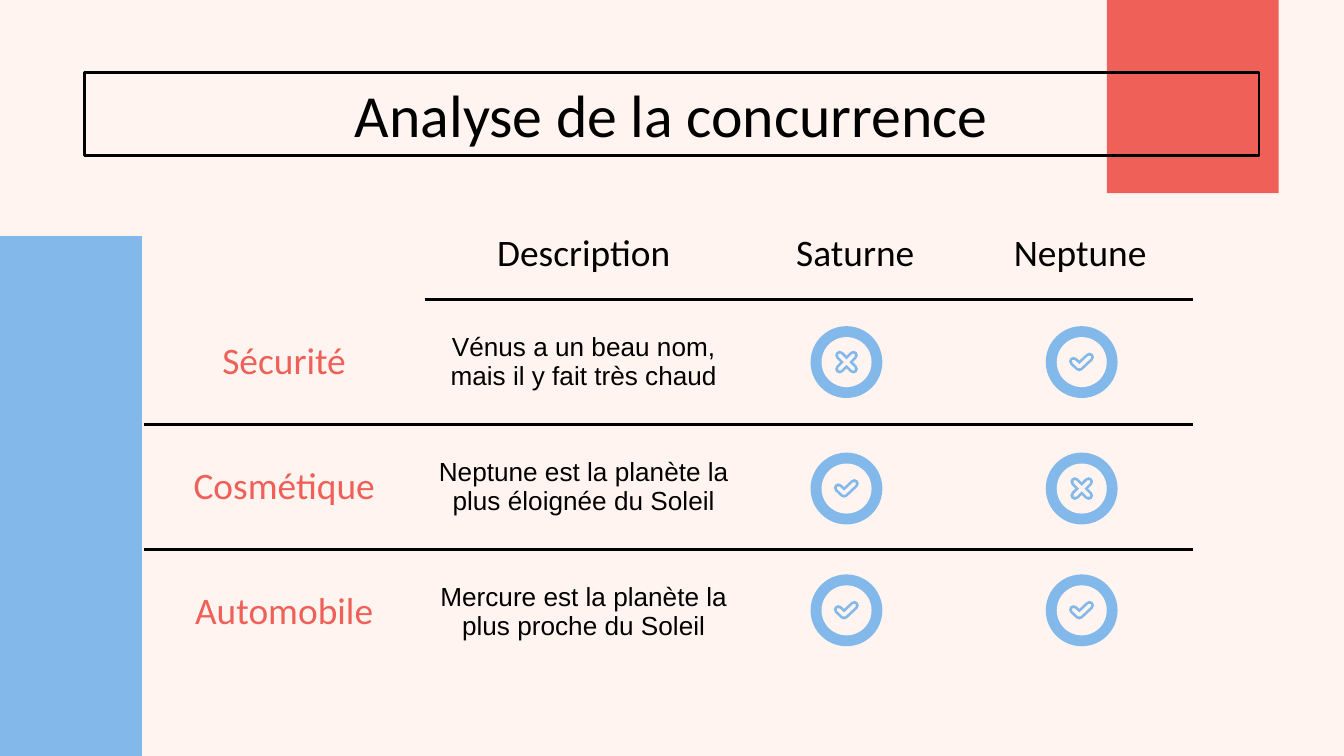
from lxml.etree import SubElement
from pptx import Presentation
from pptx.dml.color import RGBColor
from pptx.enum.shapes import MSO_SHAPE as Kind
from pptx.enum.text import MSO_ANCHOR as Anchor, PP_ALIGN as Align
from pptx.oxml.ns import qn
from pptx.util import Pt

COLORS = {"cream": "FFF4EF", "blue": "83B9EA", "red": "EF6058", "black": "000000"}
HEADS = ["", "Description", "Saturne", "Neptune"]
ROWS = [
    ("Sécurité", "Vénus a un beau nom, mais il y fait très chaud", "cross", "check"),
    ("Cosmétique", "Neptune est la planète la plus éloignée du Soleil", "check", "cross"),
    ("Automobile", "Mercure est la planète la plus proche du Soleil", "check", "check"),
]
MARKS = {
    "check": [[(-4.4, -0.4), (-1.3, 2.5), (4.2, -2.7)]],
    "cross": [[(-3.7, -3.7), (3.7, 3.7)], [(3.7, -3.7), (-3.7, 3.7)]],
}

prs = Presentation()
prs.slide_width, prs.slide_height = Pt(720), Pt(405)
slide = prs.slides.add_slide(prs.slide_layouts[6])
slide.background.fill.solid()
slide.background.fill.fore_color.rgb = RGBColor.from_string(COLORS["cream"])


def draw(kind, x, y, w, h, color=None):
    shape = slide.shapes.add_shape(kind, Pt(x), Pt(y), Pt(w), Pt(h))
    shape.shadow.inherit = False
    shape.line.fill.background()
    if color:
        shape.fill.solid()
        shape.fill.fore_color.rgb = RGBColor.from_string(COLORS[color])
    else:
        shape.fill.background()
    return shape


def style(frame, size, font, color):
    para = frame.paragraphs[0]
    para.alignment = Align.CENTER
    for run in para.runs:
        run.font.size = Pt(size)
        run.font.name = font
        run.font.color.rgb = RGBColor.from_string(COLORS[color])


draw(Kind.RECTANGLE, 0, 126.5, 76, 278.5, "blue")
draw(Kind.RECTANGLE, 593, 0, 92, 103.5, "red")

title = draw(Kind.RECTANGLE, 45.25, 38.75, 629.25, 44.5)
title.line.color.rgb = RGBColor.from_string(COLORS["black"])
title.line.width = Pt(1.5)
title.text_frame.text = "Analyse de la concurrence"
title.text_frame.vertical_anchor = Anchor.MIDDLE
style(title.text_frame, 32, "Calibri", "black")

widths = [150.5, 170.5, 120.5, 120.5]
heights = [49.5, 67, 67, 67]
table = slide.shapes.add_table(
    4, 4, Pt(77), Pt(111), Pt(sum(widths)), Pt(sum(heights))).table
table.first_row = table.horz_banding = False
for col, width in zip(table.columns, widths):
    col.width = Pt(width)
for row, height in zip(table.rows, heights):
    row.height = Pt(height)

texts = [HEADS] + [(name, note, "", "") for name, note, *_ in ROWS]
for r, line in enumerate(texts):
    for c, text in enumerate(line):
        cell = table.cell(r, c)
        cell.text = text
        cell.vertical_anchor = Anchor.MIDDLE
        cell.margin_left = cell.margin_right = Pt(7.2)
        cell.margin_top = cell.margin_bottom = Pt(7.2)
        if r and c == 1:
            style(cell.text_frame, 14, "Arial", "black")
        else:
            style(cell.text_frame, 20, "Calibri", "black" if r == 0 else "red")
        props = cell._tc.get_or_add_tcPr()
        rules = {"L": False, "R": False,
                 "T": r > 1 or (r == 1 and c > 0),
                 "B": r < 3 and (r > 0 or c > 0)}
        for side, shown in rules.items():
            edge = SubElement(props, qn("a:ln" + side), w=str(Pt(1.5)))
            if shown:
                fill = SubElement(edge, qn("a:solidFill"))
                SubElement(fill, qn("a:srgbClr"), val=COLORS["black"])
            else:
                SubElement(edge, qn("a:noFill"))
        cell.fill.background()

for (_, _, *marks), y in zip(ROWS, (194, 261.75, 327)):
    for mark, x in zip(marks, (453.5, 579.5)):
        for rad, color in ((19.25, "blue"), (13.4, "cream")):
            draw(Kind.OVAL, x - rad, y - rad, 2 * rad, 2 * rad, color)
        for width, color in ((4.8, "blue"), (1.9, "cream")):
            strokes = [[(Pt(x + dx), Pt(y + dy)) for dx, dy in stroke]
                       for stroke in MARKS[mark]]
            pen = slide.shapes.build_freeform(*strokes[0][0])
            pen.add_line_segments(strokes[0][1:], close=False)
            for stroke in strokes[1:]:
                pen.move_to(*stroke[0])
                pen.add_line_segments(stroke[1:], close=False)
            icon = pen.convert_to_shape()
            icon.shadow.inherit = False
            icon.fill.background()
            icon.line.color.rgb = RGBColor.from_string(COLORS[color])
            icon.line.width = Pt(width)
            edge = icon._element.spPr.find(qn("a:ln"))
            edge.set("cap", "rnd")
            SubElement(edge, qn("a:round"))

prs.save("out.pptx")
